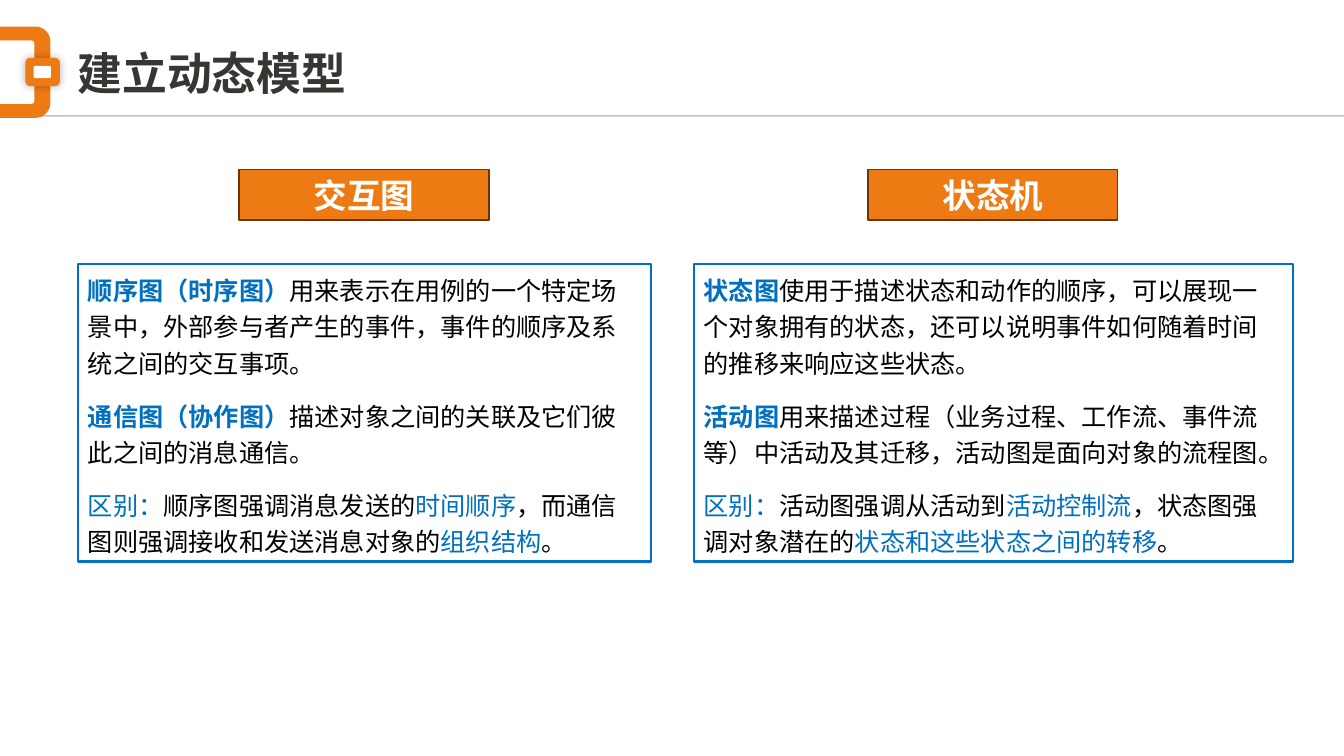
import math
from dataclasses import dataclass

import pptx
import pptx.dml.color
import pptx.enum.lang
import pptx.enum.shapes
import pptx.enum.text
import pptx.oxml
import pptx.oxml.ns
import pptx.util

Cm, Pt = pptx.util.Cm, pptx.util.Pt
qn = pptx.oxml.ns.qn
ALIGN = pptx.enum.text.PP_ALIGN
ANCHOR = pptx.enum.text.MSO_ANCHOR
SHAPE = pptx.enum.shapes.MSO_SHAPE


@dataclass(frozen=True)
class Theme:
    font: str = "Arial"
    orange: str = "EE7A13"
    brown: str = "683508"
    blue: str = "0070C0"
    dark: str = "363632"
    black: str = "000000"
    white: str = "FFFFFF"
    title: int = 32
    heading: int = 24
    body: int = 18


THEME = Theme()
TERM = {"color": THEME.blue, "bold": True}
MARK = {"color": THEME.blue}
PLAIN = {}

COLUMNS = [
    {"heading": "交互图", "heading_left": 6.02, "left": 1.96, "width": 14.45, "paragraphs": [
        [("顺序图（时序图）", TERM),
         ("用来表示在用例的一个特定场景中，外部参与者产生的事件，事件的顺序及系统之间的交互事项。", PLAIN)],
        [("通信图（协作图）", TERM),
         ("描述对象之间的关联及它们彼此之间的消息通信。", PLAIN)],
        [("区别：", MARK), ("顺序图强调消息发送的", PLAIN), ("时间顺序", MARK),
         ("，而通信图则强调接收和发送消息对象的", PLAIN), ("组织结构", MARK), ("。", PLAIN)],
    ]},
    {"heading": "状态机", "heading_left": 21.87, "left": 17.48, "width": 15.11, "paragraphs": [
        [("状态图", TERM),
         ("使用于描述状态和动作的顺序，可以展现一个对象拥有的状态，还可以说明事件如何随着时间的推移来响应这些状态。", PLAIN)],
        [("活动图", TERM),
         ("用来描述过程（业务过程、工作流、事件流等）中活动及其迁移，活动图是面向对象的流程图。", PLAIN)],
        [("区别：", MARK), ("活动图强调从活动到", PLAIN), ("活动控制流", MARK),
         ("，状态图强调对象潜在的", PLAIN), ("状态和这些状态之间的转移", MARK), ("。", PLAIN)],
    ]},
]


def rgb(color):
    return pptx.dml.color.RGBColor.from_string(color)


def add_run(p, text, size=THEME.body, color=THEME.black, bold=False):
    r = p.add_run()
    r.text = text
    r.font.size, r.font.bold, r.font.name = Pt(size), bold, THEME.font
    r.font.color.rgb = rgb(color)
    r.font.language_id = pptx.enum.lang.MSO_LANGUAGE_ID.SIMPLIFIED_CHINESE
    ea = pptx.oxml.parse_xml(f'<a:ea {pptx.oxml.ns.nsdecls("a")} typeface="{THEME.font}"/>')
    r.font._element.append(ea)


def write(sp, paragraphs, align=ALIGN.LEFT, anchor=ANCHOR.MIDDLE, spacing=1.0, gap=0, **fmt):
    """Fill a placeholder with unbulleted paragraphs, each a list of (text, format)."""
    tf = sp.text_frame
    tf.word_wrap, tf.vertical_anchor = True, anchor
    tf.auto_size = pptx.enum.text.MSO_AUTO_SIZE.NONE
    for i, runs in enumerate(paragraphs):
        p = tf.add_paragraph() if i else tf.paragraphs[0]
        pPr = p._p.get_or_add_pPr()
        pPr.set("marL", "0")
        pPr.set("indent", "0")
        pPr.append(pptx.oxml.parse_xml(f'<a:buNone {pptx.oxml.ns.nsdecls("a")}/>'))
        p.alignment, p.line_spacing = align, spacing
        p.space_before = Pt(gap if i else 0)
        for text, run_fmt in runs:
            add_run(p, text, **{**fmt, **run_fmt})


def place(sp, left, top, width, height):
    sp.left, sp.top, sp.width, sp.height = Cm(left), Cm(top), Cm(width), Cm(height)


def outline(sp, color, width):
    sp.line.color.rgb = rgb(color)
    sp.line.width = Pt(width)


def paint(sp, color):
    sp.shadow.inherit = False
    sp.fill.solid()
    sp.fill.fore_color.rgb = rgb(color)
    sp.line.fill.background()


def add_tab(s, top, width, height, radius, color):
    """Draw a block at the left slide edge with its two right corners rounded."""
    points = [(0, top)]
    for cy, start in ((top + radius, -90), (top + height - radius, 0)):
        for step in range(13):
            angle = math.radians(start + step * 7.5)
            points.append((width - radius + radius * math.cos(angle),
                           cy + radius * math.sin(angle)))
    points.append((0, top + height))
    points = [(Cm(x), Cm(y)) for x, y in points]
    builder = s.shapes.build_freeform(*points[0])
    builder.add_line_segments(points[1:], close=True)
    paint(builder.convert_to_shape(), color)


def add_link(s, left, top, width, height, color, corner):
    sp = s.shapes.add_shape(SHAPE.ROUNDED_RECTANGLE, Cm(left), Cm(top), Cm(width), Cm(height))
    sp.adjustments[0] = corner
    paint(sp, color)
    return sp


def add_glow(sp):
    shadow = pptx.oxml.parse_xml(
        f'<a:outerShdw {pptx.oxml.ns.nsdecls("a")} blurRad="{Pt(6)}" dist="0" dir="0">'
        f'<a:srgbClr val="{THEME.black}"><a:alpha val="30000"/></a:srgbClr></a:outerShdw>')
    sp._element.spPr.find(qn("a:effectLst")).append(shadow)


def add_rule(s, left, right, y):
    line = s.shapes.add_connector(pptx.enum.shapes.MSO_CONNECTOR.STRAIGHT,
                                  Cm(left), Cm(y), Cm(right), Cm(y))
    outline(line, THEME.dark, 1)
    nsdecl = pptx.oxml.ns.nsdecls("a")
    color = line._element.spPr.find(".//" + qn("a:srgbClr"))
    color.append(pptx.oxml.parse_xml(f'<a:alpha {nsdecl} val="31000"/>'))
    line._element.spPr.append(pptx.oxml.parse_xml(f'<a:effectLst {nsdecl}/>'))


def add_ornament(s):
    add_rule(s, 0.64, 33.87, 2.92)
    add_tab(s, 0.67, 1.27, 2.3, 0.38, THEME.orange)
    add_tab(s, 1.02, 0.87, 1.6, 0.09, THEME.white)
    add_glow(add_link(s, 0.64, 1.46, 0.87, 0.71, THEME.orange, 0.17))
    add_link(s, 0.85, 1.66, 0.43, 0.31, THEME.white, 0.1)


def fill_column(heading, body, column):
    place(heading, column["heading_left"], 4.27, 6.3, 1.27)
    paint(heading, THEME.orange)
    outline(heading, THEME.brown, 1)
    write(heading, [[(column["heading"], PLAIN)]], align=ALIGN.CENTER,
          size=THEME.heading, color=THEME.white, bold=True)
    place(body, column["left"], 6.66, column["width"], 7.49)
    outline(body, THEME.blue, 1.5)
    write(body, column["paragraphs"], anchor=ANCHOR.TOP, spacing=1.2, gap=12)


def main():
    prs = pptx.Presentation()
    prs.slide_width, prs.slide_height = Cm(33.87), Cm(19.05)
    s = prs.slides.add_slide(prs.slide_layouts.get_by_name("Comparison"))
    add_ornament(s)
    title, *boxes = s.placeholders
    place(title, 1.7, 1.02, 30.23, 1.63)
    write(title, [[("建立动态模型", PLAIN)]], size=THEME.title, color=THEME.dark, bold=True)
    for heading, body, column in zip(boxes[::2], boxes[1::2], COLUMNS):
        fill_column(heading, body, column)
    prs.save("out.pptx")


if __name__ == "__main__":
    main()
